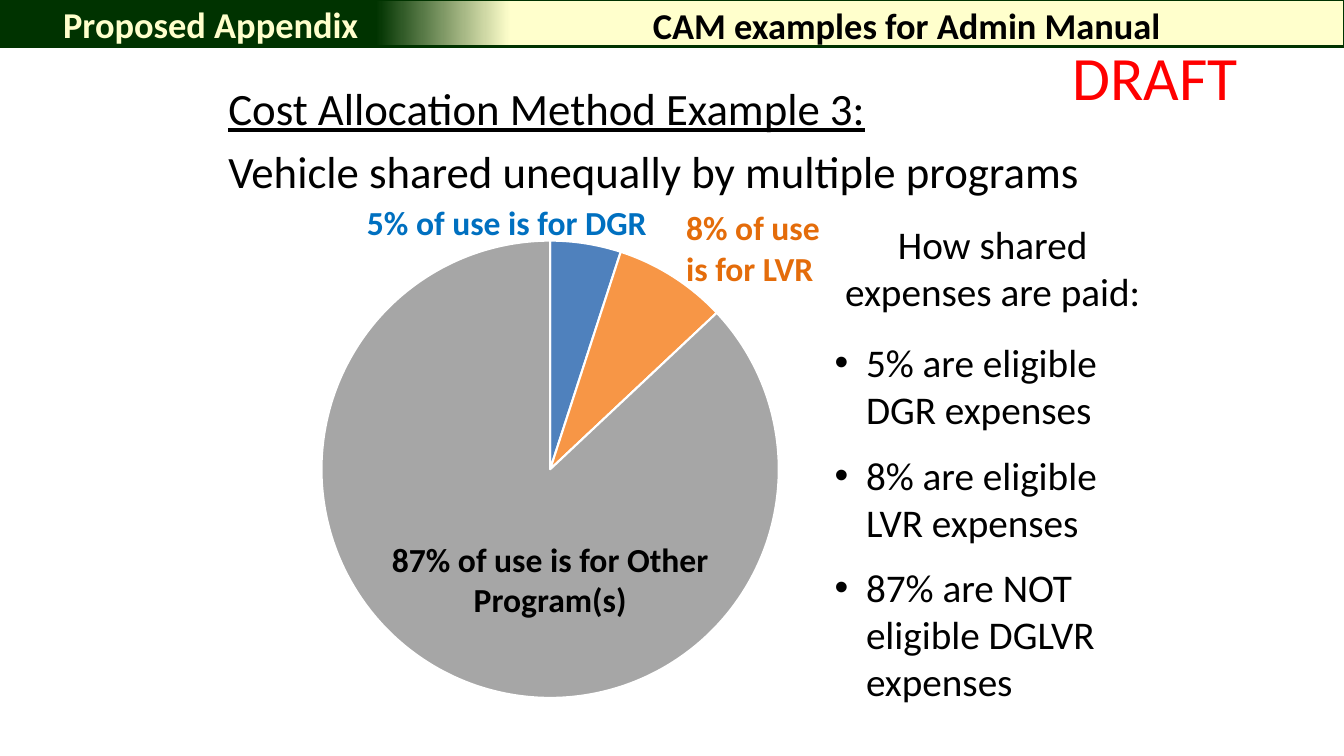
from lxml import etree
from pptx import Presentation
from pptx import util as u
from pptx.chart import data
from pptx.dml.color import RGBColor
from pptx.enum import chart as charts, shapes, text
from pptx.oxml import parse_xml
from pptx.oxml.ns import nsdecls, qn

FONT = "Calibri"
BLACK = RGBColor(0x00, 0x00, 0x00)
WHITE = RGBColor(0xFF, 0xFF, 0xFF)
GREEN = RGBColor(0x00, 0x33, 0x00)
CREAM = RGBColor(0xFF, 0xFF, 0xCC)
RED = RGBColor(0xFF, 0x00, 0x00)
DGR_TEXT = RGBColor(0x00, 0x70, 0xC0)
LVR_TEXT = RGBColor(0xE4, 0x6C, 0x0A)
DGR_SLICE = RGBColor(0x4F, 0x81, 0xBD)
LVR_SLICE = RGBColor(0xF7, 0x96, 0x46)
OTHER_SLICE = RGBColor(0xA6, 0xA6, 0xA6)
LEFT, CENTER = text.PP_ALIGN.LEFT, text.PP_ALIGN.CENTER
TOP, MIDDLE = text.MSO_ANCHOR.TOP, text.MSO_ANCHOR.MIDDLE


def add_text(slide, box, lines, size, color=BLACK, bold=False, align=LEFT, anchor=TOP):
    """Place a wrapped text box, one paragraph per line, and return its paragraphs."""
    frame = slide.shapes.add_textbox(*map(u.Pt, box)).text_frame
    frame.word_wrap = True
    frame.vertical_anchor = anchor
    frame.text = "\n".join(lines)
    for paragraph in frame.paragraphs:
        paragraph.alignment = align
        font = paragraph.font
        font.name, font.size, font.bold = FONT, u.Pt(size), bold
        font.color.rgb = color
    return frame.paragraphs


def add_header(slide, box):
    """Draw the gradient band with the section name and the slide title."""
    left, top, width, height = box
    band = slide.shapes.add_shape(shapes.MSO_SHAPE.RECTANGLE, *map(u.Pt, box))
    band.shadow.inherit = False
    band.fill.gradient()
    band.fill.gradient_angle = 0
    for stop, position, color in zip(band.fill.gradient_stops, (0.28, 0.38), (GREEN, CREAM)):
        stop.position = position
        stop.color.rgb = color
    band.line.color.rgb = GREEN
    band.line.width = u.Pt(2)
    title_left = left + width * 0.35
    add_text(slide, (title_left, top, left + width - title_left, height + 3),
             ["CAM examples for Admin Manual"], 26, bold=True, align=CENTER, anchor=MIDDLE)
    add_text(slide, (left + 38, top - 1, 346, height + 3),
             ["Proposed Appendix"], 26, CREAM, bold=True, anchor=MIDDLE)


def add_heading(slide, box):
    """Write the underlined example number and its description."""
    example, description = add_text(slide, box, [
        "Cost Allocation Method Example 3:",
        "Vehicle shared unequally by multiple programs"], 32)
    example.font.underline = True
    description.space_before = u.Pt(6.4)


def add_usage_pie(slide, box):
    """Chart the vehicle use by program and label each slice."""
    left, top, width, height = box
    usage = data.CategoryChartData()
    usage.categories = ["1", "2", "3"]
    usage.add_series("Series 1", (5, 8, 87))
    pie = slide.shapes.add_chart(charts.XL_CHART_TYPE.PIE, *map(u.Pt, box), usage).chart
    pie.has_legend = pie.has_title = False
    pie.font.name, pie.font.size, pie.font.color.rgb = FONT, u.Pt(10), BLACK
    plot = pie.plots[0]
    plot.vary_by_categories = True
    for index, color in enumerate((DGR_SLICE, LVR_SLICE, OTHER_SLICE)):
        slice_format = plot.series[0].points[index].format
        slice_format.fill.solid()
        slice_format.fill.fore_color.rgb = color
        slice_format.line.color.rgb = WHITE
        slice_format.line.width = u.Pt(1.5)

    share_high = 0.94
    share_wide = share_high * height / width
    layout = parse_xml(f"<c:layout {nsdecls('c')}><c:manualLayout/></c:layout>")
    for tag, value in (("layoutTarget", "inner"), ("xMode", "edge"), ("yMode", "edge"),
                       ("x", (1 - share_wide) / 2), ("y", (1 - share_high) / 2),
                       ("w", share_wide), ("h", share_high)):
        etree.SubElement(layout[0], qn(f"c:{tag}")).set("val", str(value))
    plot_area = pie.element.find(".//" + qn("c:plotArea"))
    for automatic in plot_area.findall(qn("c:layout")):
        plot_area.remove(automatic)
    plot_area.insert(0, layout)

    add_text(slide, (left + 111, top - 21, 231, 36),
             ["5% of use is for DGR"], 24, DGR_TEXT, bold=True)
    add_text(slide, (left + 112, top + 220, 274, 65),
             ["87% of use is for Other Program(s)"], 24, bold=True, align=CENTER)
    add_text(slide, (left + 339, top - 17, 129, 65),
             ["8% of use is for LVR"], 24, LVR_TEXT, bold=True)


def add_payment_list(slide, box):
    """List how the shared expenses are paid, as bullets under a centred lead."""
    lead, *payments = add_text(slide, box, [
        "How shared expenses are paid:",
        "5% are eligible DGR expenses",
        "8% are eligible LVR expenses",
        "87% are NOT eligible DGLVR expenses"], 28)
    lead.alignment = CENTER
    for payment, gap in zip(payments, (17, 13.4, 12.8)):
        payment.space_before = u.Pt(gap)
        properties = payment._p.get_or_add_pPr()
        indent = u.Pt(22.5)
        properties.set("marL", str(indent))
        properties.set("indent", str(-indent))
        bullet_font = parse_xml(f'<a:buFont {nsdecls("a")} typeface="Arial"/>')
        bullet = parse_xml(f'<a:buChar {nsdecls("a")} char="•"/>')
        defaults = properties.find(qn("a:defRPr"))
        defaults.addprevious(bullet_font)
        defaults.addprevious(bullet)


def main():
    """Build the slide and save it."""
    deck = Presentation()
    deck.slide_width, deck.slide_height = u.Pt(960), u.Pt(540)
    slide = deck.slides.add_slide(deck.slide_layouts[6])
    add_header(slide, (0, 0, 960, 33))
    add_heading(slide, (156, 54, 648, 100))
    add_usage_pie(slide, (144, 161.5, 498, 347.5))
    add_payment_list(slide, (589, 154, 240, 362))
    add_text(slide, (759, 24.5, 150, 60.5), ["DRAFT"], 44, RED)
    deck.save("out.pptx")


if __name__ == "__main__":
    main()
